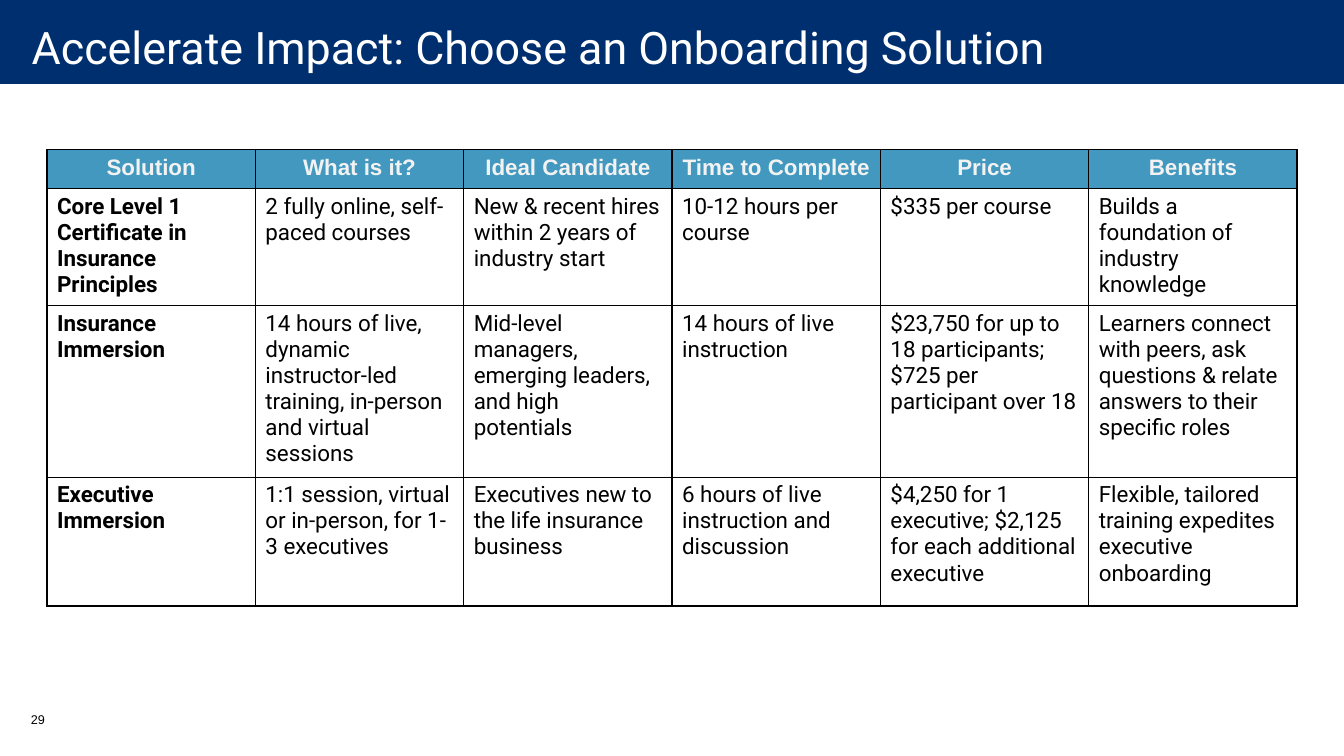
"""Build the slide that compares onboarding solutions."""
import dataclasses

import lxml.etree
import pptx
import pptx.dml.color
import pptx.enum.shapes
import pptx.enum.text
import pptx.oxml.ns
import pptx.util

Pt = pptx.util.Pt


@dataclasses.dataclass(frozen=True)
class Theme:
    """Hold the colours, fonts and type sizes."""
    navy: str = "002F70"
    teal: str = "4298BE"
    white: str = "FFFFFF"
    pale: str = "F2F2F2"
    black: str = "000000"
    body_font: str = "Roboto"
    label_font: str = "Arial"
    title_size: int = 32
    table_size: int = 16
    number_size: int = 9


class SlideBuilder:
    """Place styled elements on the current slide."""

    def __init__(self, slide, theme):
        """Keep the slide and its theme."""
        self.slide = slide
        self.theme = theme

    def style(self, paragraph, font_name, size, colour, bold=False):
        """Set the font of a paragraph."""
        font = paragraph.font
        font.name, font.size, font.bold = font_name, Pt(size), bold
        font.color.rgb = pptx.dml.color.RGBColor.from_string(colour)

    def paint(self, fill, colour):
        """Apply a solid fill."""
        fill.solid()
        fill.fore_color.rgb = pptx.dml.color.RGBColor.from_string(colour)

    def title(self, text, left, top, width, height):
        """Fill and place the title placeholder."""
        title = self.slide.shapes.title
        title.left, title.top, title.width, title.height = map(Pt, (left, top, width, height))
        frame = title.text_frame
        frame.text = text
        frame.word_wrap = True
        frame.auto_size = pptx.enum.text.MSO_AUTO_SIZE.NONE
        frame.vertical_anchor = pptx.enum.text.MSO_ANCHOR.MIDDLE
        frame.margin_left, frame.margin_right = Pt(21.6), Pt(14.4)
        frame.margin_top = frame.margin_bottom = 0
        heading = frame.paragraphs[0]
        heading.alignment = pptx.enum.text.PP_ALIGN.LEFT
        self.style(heading, self.theme.body_font, self.theme.title_size, self.theme.white)

    def band(self, left, top, width, height):
        """Draw the coloured band behind the title."""
        band = self.slide.shapes.add_shape(
            pptx.enum.shapes.MSO_SHAPE.RECTANGLE, *map(Pt, (left, top, width, height)))
        band.shadow.inherit = False
        self.paint(band.fill, self.theme.navy)
        band.line.fill.background()
        self.slide.shapes.title.element.addprevious(band.element)

    def page_number(self, text, left, top, width, height):
        """Write the page number."""
        box = self.slide.shapes.add_textbox(*map(Pt, (left, top, width, height)))
        box.text_frame.word_wrap = True
        box.text_frame.text = text
        self.style(box.text_frame.paragraphs[0], self.theme.label_font,
                   self.theme.number_size, self.theme.black)

    def borders(self, cell):
        """Outline a cell on its four sides."""
        properties = cell._tc.get_or_add_tcPr()
        qn = pptx.oxml.ns.qn
        for position, side in enumerate(("lnL", "lnR", "lnT", "lnB")):
            line = lxml.etree.Element(qn(f"a:{side}"), w=str(Pt(1)))
            fill = lxml.etree.SubElement(line, qn("a:solidFill"))
            lxml.etree.SubElement(fill, qn("a:srgbClr"), val=self.theme.black)
            properties.insert(position, line)

    def table(self, rows, left, top, width, heights):
        """Draw a table with a header row and bold first column."""
        theme = self.theme
        table = self.slide.shapes.add_table(
            len(rows), len(rows[0]), *map(Pt, (left, top, width, sum(heights)))).table
        table.horz_banding = False
        for column in table.columns:
            column.width = Pt(width / len(rows[0]))
        for row_index, (texts, height) in enumerate(zip(rows, heights)):
            table.rows[row_index].height = Pt(height)
            for column_index, text in enumerate(texts):
                cell = table.cell(row_index, column_index)
                cell.text = text
                paragraph = cell.text_frame.paragraphs[0]
                if row_index == 0:
                    self.paint(cell.fill, theme.teal)
                    paragraph.alignment = pptx.enum.text.PP_ALIGN.CENTER
                    self.style(paragraph, theme.label_font, theme.table_size, theme.pale, True)
                else:
                    cell.fill.background()
                    self.style(paragraph, theme.body_font, theme.table_size, theme.black,
                               column_index == 0)
                self.borders(cell)


SOLUTIONS = [
    ("Solution", "What is it?", "Ideal Candidate", "Time to Complete", "Price", "Benefits"),
    ("Core Level 1 Certificate in Insurance Principles",
     "2 fully online, self-paced courses",
     "New & recent hires within 2 years of industry start",
     "10-12 hours per course",
     "$335 per course",
     "Builds a foundation of industry knowledge"),
    ("Insurance Immersion",
     "14 hours of live, dynamic instructor-led training, in-person and virtual sessions",
     "Mid-level managers, emerging leaders, and high potentials",
     "14 hours of live instruction",
     "$23,750 for up to 18 participants; $725 per participant over 18",
     "Learners connect with peers, ask questions & relate answers to their specific roles"),
    ("Executive Immersion",
     "1:1 session, virtual or in-person, for 1-3 executives",
     "Executives new to the life insurance business",
     "6 hours of live instruction and discussion",
     "$4,250 for 1 executive; $2,125 for each additional executive",
     "Flexible, tailored training expedites executive onboarding"),
]


def main():
    """Build and save the presentation."""
    presentation = pptx.Presentation()
    presentation.slide_width, presentation.slide_height = Pt(960), Pt(540)
    slide = presentation.slides.add_slide(presentation.slide_layouts.get_by_name("Title Only"))
    builder = SlideBuilder(slide, Theme())
    builder.title("Accelerate Impact: Choose an Onboarding Solution", 1, -2, 960, 70)
    builder.band(0, -2, 960, 62)
    builder.page_number("29", 15, 505, 35, 29)
    builder.table(SOLUTIONS, 33.6, 107, 893, (27.5, 75, 109.5, 92))
    presentation.save("out.pptx")


if __name__ == "__main__":
    main()
